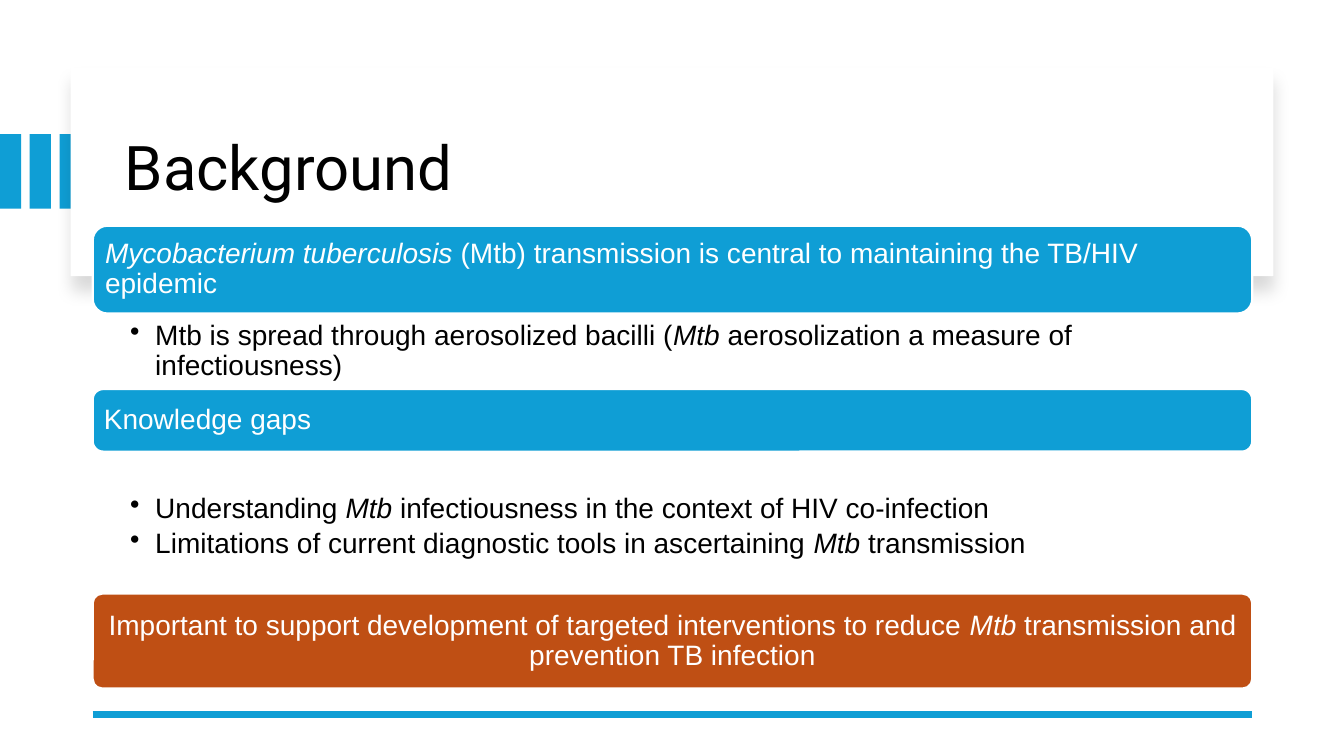
from dataclasses import dataclass

from lxml import etree
from pptx import Presentation
from pptx import util as u
from pptx.dml.color import RGBColor
from pptx.enum import shapes, text
from pptx.oxml import ns

BLUE = "0F9ED5"
ORANGE = "BF4F14"
WHITE = "FFFFFF"
BLACK = "000000"
LEFT, WIDTH = 0.92, 11.5


@dataclass
class Banner:
    top: float
    height: float
    wording: str
    fill: str = BLUE
    corner: float = 0.167
    align: text.PP_ALIGN = text.PP_ALIGN.LEFT


@dataclass
class BulletList:
    top: float
    height: float
    inset_top: float
    items: list[str]


BANNERS = [
    Banner(2.24, 0.87, "*Mycobacterium tuberculosis *(Mtb) transmission is central "
                       "to maintaining the TB/HIV epidemic"),
    Banner(3.86, 0.62, "Knowledge gaps"),
    Banner(5.89, 0.94, "Important to support development of targeted interventions "
                       "to reduce *Mtb* transmission and prevention TB infection",
           ORANGE, 0.1, text.PP_ALIGN.CENTER),
]
BULLET_LISTS = [
    BulletList(3.16, 0.7, 0.03, [
        "Mtb is spread through aerosolized bacilli (*Mtb* aerosolization a measure "
        "of infectiousness)"]),
    BulletList(4.48, 1.18, 0.42, [
        "Understanding *Mtb *infectiousness in the context of HIV co-infection",
        "Limitations of current diagnostic tools in ascertaining *Mtb *transmission"]),
]


def rgb(code: str) -> RGBColor:
    return RGBColor.from_string(code)


def set_insets(frame, left: float, top: float, right: float, bottom: float) -> None:
    frame.word_wrap = True
    frame.margin_left, frame.margin_top = u.Inches(left), u.Inches(top)
    frame.margin_right, frame.margin_bottom = u.Inches(right), u.Inches(bottom)


def write(paragraph, wording: str, color: str, size: int = 20, font: str = "Arial") -> None:
    paragraph.line_spacing = 0.9
    paragraph.font.size = u.Pt(size)
    paragraph.font.name = font
    paragraph.font.color.rgb = rgb(color)
    for index, part in enumerate(wording.split("*")):
        if part:
            run = paragraph.add_run()
            run.text = part
            if index % 2:
                run.font.italic = True


def add_block(slide, kind, left: float, top: float, width: float, height: float, fill: str):
    block = slide.shapes.add_shape(
        kind, u.Inches(left), u.Inches(top), u.Inches(width), u.Inches(height))
    block.shadow.inherit = False
    block.fill.solid()
    block.fill.fore_color.rgb = rgb(fill)
    block.line.fill.background()
    return block


def add_text_frame(slide, left: float, top: float, width: float, height: float):
    return slide.shapes.add_textbox(
        u.Inches(left), u.Inches(top), u.Inches(width), u.Inches(height)).text_frame


def cast_shadow(block) -> None:
    effects = block._element.spPr.find(ns.qn("a:effectLst"))
    shadow = etree.SubElement(
        effects, ns.qn("a:outerShdw"), blurRad=str(u.Pt(11)), dist=str(u.Pt(10)),
        dir="5400000", algn="t", rotWithShape="0")
    color = etree.SubElement(shadow, ns.qn("a:srgbClr"), val=BLACK)
    etree.SubElement(color, ns.qn("a:alpha"), val="15000")


def add_header(slide) -> None:
    for index in range(3):
        add_block(slide, shapes.MSO_SHAPE.RECTANGLE, index * 0.295, 1.33, 0.21, 0.74, BLUE)
    cast_shadow(add_block(slide, shapes.MSO_SHAPE.RECTANGLE, 0.7, 0.67, 11.93, 2.07, WHITE))
    title = add_text_frame(slide, 1.14, 0.89, 10.87, 1.6)
    set_insets(title, 0.1, 0.05, 0.1, 0.05)
    title.vertical_anchor = text.MSO_ANCHOR.MIDDLE
    write(title.paragraphs[0], "Background", BLACK, 44, "Roboto")


def add_footer_rule(slide) -> None:
    y = u.Inches(7.09)
    rule = slide.shapes.add_connector(
        shapes.MSO_CONNECTOR.STRAIGHT, u.Inches(LEFT), y, u.Inches(LEFT + WIDTH), y)
    rule.line.color.rgb = rgb(BLUE)
    rule.line.width = u.Pt(4.5)
    etree.SubElement(rule._element.spPr, ns.qn("a:effectLst"))


def add_banner(slide, banner: Banner) -> None:
    bar = add_block(slide, shapes.MSO_SHAPE.ROUNDED_RECTANGLE,
                    LEFT, banner.top, WIDTH, banner.height, banner.fill)
    bar.adjustments[0] = banner.corner
    bar.line.color.rgb = rgb(WHITE)
    bar.line.width = u.Pt(1.5)
    set_insets(bar.text_frame, 0.08, 0.08, 0.08, 0.08)
    bar.text_frame.vertical_anchor = text.MSO_ANCHOR.MIDDLE
    statement = bar.text_frame.paragraphs[0]
    statement.alignment = banner.align
    write(statement, banner.wording, WHITE)


def add_bullet_list(slide, bullets: BulletList) -> None:
    frame = add_text_frame(slide, LEFT, bullets.top, WIDTH, bullets.height)
    set_insets(frame, 0.37, bullets.inset_top, 0.16, 0.03)
    for index, item in enumerate(bullets.items):
        point = frame.add_paragraph() if index else frame.paragraphs[0]
        point.space_after = u.Pt(4)
        write(point, item, BLACK)
        properties = point._p.get_or_add_pPr()
        properties.set("marL", str(u.Inches(0.25)))
        properties.set("indent", str(u.Inches(-0.25)))
        mark = etree.Element(ns.qn("a:buChar"), char="•")
        properties.find(ns.qn("a:defRPr")).addprevious(mark)


def main() -> None:
    deck = Presentation()
    deck.slide_width, deck.slide_height = u.Inches(13.33), u.Inches(7.5)
    slide = deck.slides.add_slide(deck.slide_layouts[6])
    add_header(slide)
    add_footer_rule(slide)
    for banner in BANNERS:
        add_banner(slide, banner)
    for bullets in BULLET_LISTS:
        add_bullet_list(slide, bullets)
    deck.save("out.pptx")


if __name__ == "__main__":
    main()
